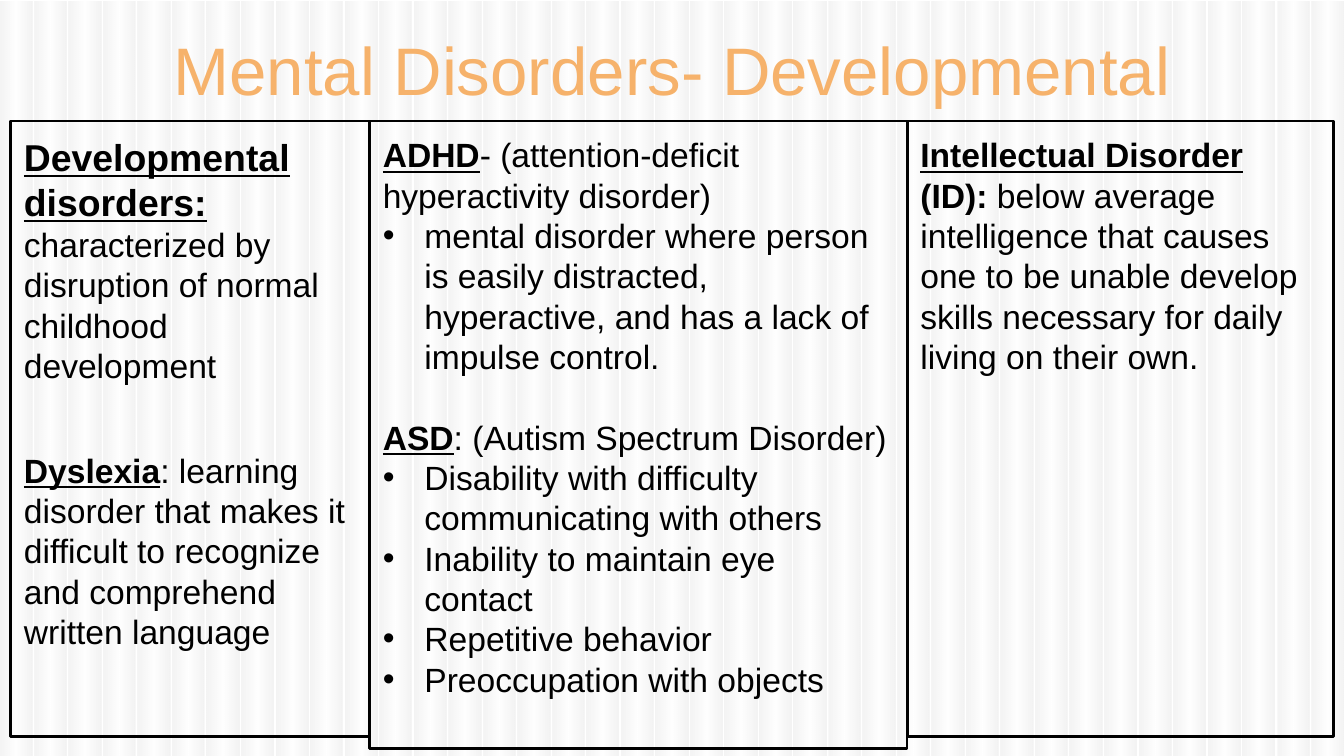
from lxml import etree
from pptx import Presentation
from pptx.dml.color import RGBColor
from pptx.enum.shapes import MSO_SHAPE as SHAPE
from pptx.enum.text import MSO_ANCHOR as ANCHOR, PP_ALIGN as ALIGN
from pptx.oxml import parse_xml
from pptx.oxml.ns import nsdecls, qn
from pptx.util import Inches, Pt


def color(value):
    return RGBColor.from_string(value)


def add_run(p, text, size, value, bold=False, underline=False):
    r = p.add_run()
    r.text = text
    f = r.font
    f.name, f.size, f.bold, f.underline = "Arial", Pt(size), bold, underline
    f.color.rgb = color(value)


prs = Presentation()
prs.slide_width, prs.slide_height = Inches(10), Inches(10 * 9 / 16)
s = prs.slides.add_slide(prs.slide_layouts[5])
s.background.fill.solid()
s.background.fill.fore_color.rgb = color("FFFFFF")

stops = "".join(
    f'<a:gs pos="{pos}000"><a:srgbClr val="{value}"><a:alpha val="18000"/></a:srgbClr></a:gs>'
    for pos, value in [(0, "BFBFBF"), (50, "FFFFFF"), (97, "BFBFBF"), (100, "BFBFBF")]
)
gradient = (f'<a:gradFill {nsdecls("a")} rotWithShape="1"><a:gsLst>{stops}</a:gsLst>'
            '<a:lin ang="0" scaled="0"/></a:gradFill>')
stripes = s.shapes.add_group_shape()
stripe_count = 39
step = 9.76 / (stripe_count - 1)
for i in range(stripe_count):
    sp = stripes.shapes.add_shape(
        SHAPE.RECTANGLE, Inches(i * step), Inches(0.01), Inches(0.24), Inches(5.62))
    sp.shadow.inherit = False
    sp.line.fill.background()
    sp._element.spPr.find(qn("a:prstGeom")).addnext(parse_xml(gradient))

title = s.shapes.title
s.shapes._spTree.append(title._element)
title.left, title.top = Inches(0.75), Inches(0.11)
title.width, title.height = Inches(8.5), Inches(0.3)
tf = title.text_frame
tf.word_wrap = True
tf.vertical_anchor = ANCHOR.TOP
tf.margin_left = tf.margin_right = tf.margin_top = tf.margin_bottom = Inches(0.1)
p = tf.paragraphs[0]
p.alignment = ALIGN.CENTER
add_run(p, "Mental Disorders- Developmental", 36, "F6B26B")

columns = [
    (0.08, 2.67, 4.58, [
        (6.4, False, [
            ("Developmental disorders: ", 20, True, True),
            ("characterized by disruption of normal childhood development", 18, False, False)]),
        (34.4, False, [
            ("Dyslexia", 18, True, True),
            (": learning disorder that makes it difficult to recognize and comprehend "
             "written language", 18, False, False)]),
    ]),
    (2.75, 4, 4.67, [
        (0, False, [
            ("ADHD", 18, True, True),
            ("- (attention-deficit hyperactivity disorder)", 18, False, False)]),
        (0, True, [
            ("mental disorder where person is easily distracted, hyperactive, and has a "
             "lack of impulse control.", 18, False, False)]),
        (21.6, False, [
            ("ASD", 18, True, True),
            (": (Autism Spectrum Disorder)", 18, False, False)]),
        (0, True, [("Disability with difficulty communicating with others", 18, False, False)]),
        (0, True, [("Inability to maintain eye contact", 18, False, False)]),
        (0, True, [("Repetitive behavior", 18, False, False)]),
        (0, True, [("Preoccupation with objects", 18, False, False)]),
    ]),
    (6.75, 3.17, 4.58, [
        (0, False, [
            ("Intellectual Disorder ", 18, True, True),
            ("(ID): ", 18, True, False),
            ("below average intelligence that causes one to be unable develop skills "
             "necessary for daily living on their own.", 18, False, False)]),
    ]),
]

for left, width, height, paragraphs in columns:
    sp = s.shapes.add_shape(
        SHAPE.RECTANGLE, Inches(left), Inches(0.9), Inches(width), Inches(height))
    sp.shadow.inherit = False
    sp.fill.background()
    sp.line.color.rgb = color("000000")
    sp.line.width = Pt(1.5)
    tf = sp.text_frame
    tf.word_wrap = True
    tf.vertical_anchor = ANCHOR.TOP
    tf.margin_left = tf.margin_top = tf.margin_bottom = Inches(0.1)
    tf.margin_right = Inches(0.12)
    for i, (before, bulleted, runs) in enumerate(paragraphs):
        p = tf.add_paragraph() if i else tf.paragraphs[0]
        p.alignment = ALIGN.LEFT
        p.space_before = Pt(before)
        if bulleted:
            pPr = p._p.get_or_add_pPr()
            pPr.set("marL", str(Inches(0.31)))
            pPr.set("indent", str(-Inches(0.31)))
            bullet_color = etree.SubElement(pPr, qn("a:buClr"))
            etree.SubElement(bullet_color, qn("a:srgbClr"), val="000000")
            etree.SubElement(pPr, qn("a:buFont"), typeface="Arial")
            etree.SubElement(pPr, qn("a:buChar"), char="•")
        for text, size, bold, underline in runs:
            add_run(p, text, size, "000000", bold, underline)

prs.save("out.pptx")
